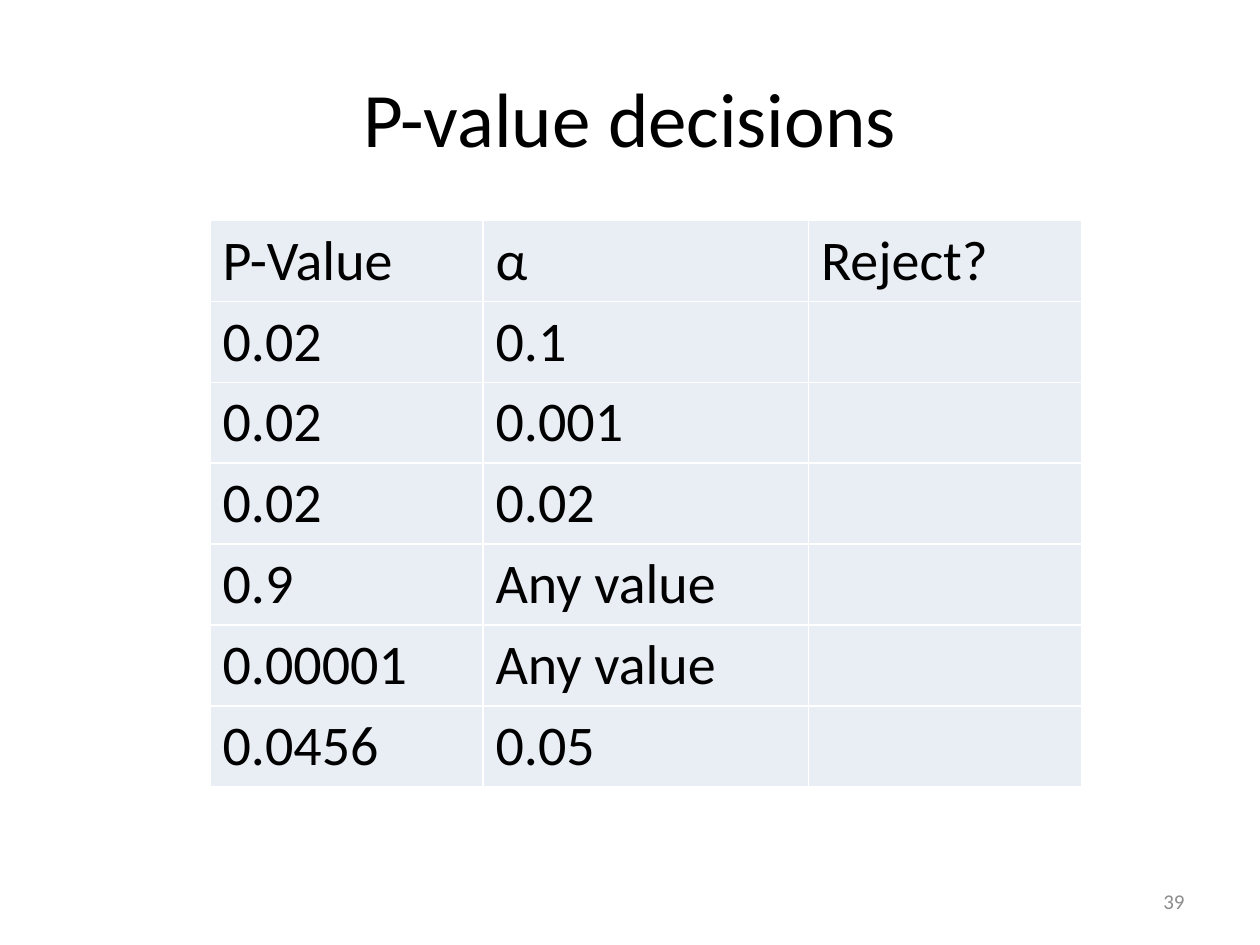
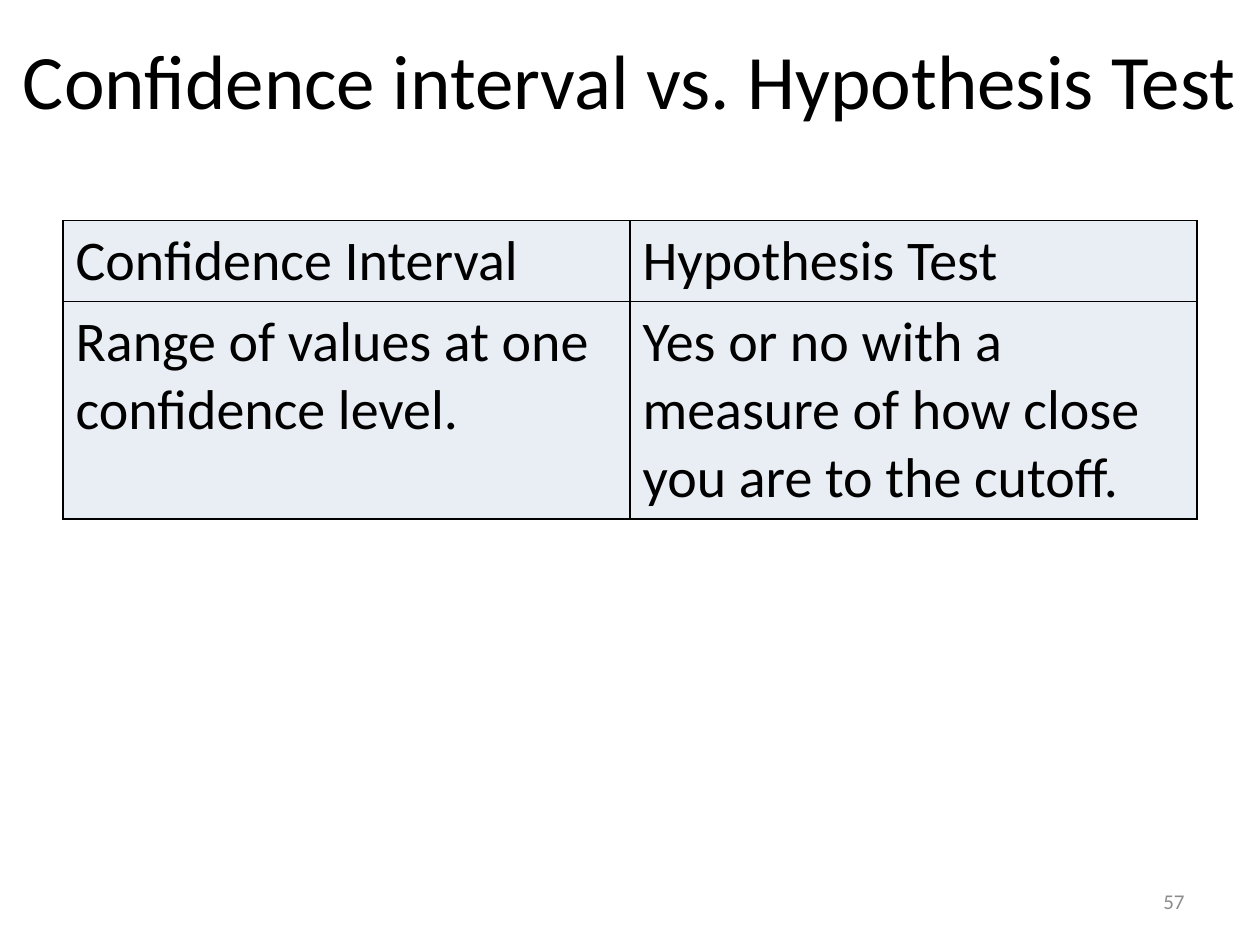
from pptx import Presentation
from pptx.dml.color import RGBColor
from pptx.enum.text import MSO_ANCHOR as Anchor, PP_ALIGN as Align
from pptx.oxml import parse_xml
from pptx.oxml.ns import nsdecls
from pptx.util import Pt

BLACK = RGBColor(0x00, 0x00, 0x00)
WHITE = RGBColor(0xFF, 0xFF, 0xFF)
PALE = RGBColor(0xE9, 0xED, 0xF4)
GRAY = RGBColor(0x8C, 0x8C, 0x8C)

# Shared text styles
FACE = {"name": "Calibri", "bold": False}
TITLE = {**FACE, "size": Pt(44)}
CELL = {**FACE, "size": Pt(32)}
PAGE = {**FACE, "size": Pt(12)}

LINE = 39  # height of one line of cell text
PAD = 7.25  # top and bottom cell margins together
TOP = 126  # top edge of every table

TESTS = [
    ("P-Value", "α", "Reject?"),
    ("0.02", "0.1", ""),
    ("0.02", "0.001", ""),
    ("0.02", "0.02", ""),
    ("0.9", "Any value", ""),
    ("0.00001", "Any value", ""),
    ("0.0456", "0.05", ""),
]
METHODS = [
    ("Confidence Interval", "Hypothesis Test"),
    ("Range of values at one confidence level.",
     "Yes or no with a measure of how close you are to the cutoff."),
]


def style(para, look, color, align):
    para.alignment = align
    for key, value in look.items():
        setattr(para.font, key, value)
    para.font.color.rgb = color


def place(shape, box):
    for side, value in zip(("left", "top", "width", "height"), box):
        setattr(shape, side, Pt(value))


def write(shape, text, look, color, align):
    frame = shape.text_frame
    frame.text = text
    frame.word_wrap = True
    frame.vertical_anchor = Anchor.MIDDLE
    style(frame.paragraphs[0], look, color, align)


def add_slide(deck, title, box, page):
    slide = deck.slides.add_slide(deck.slide_layouts[5])
    place(slide.shapes.title, box)
    write(slide.shapes.title, title, TITLE, BLACK, Align.CENTER)
    # Page number
    note = slide.shapes.add_textbox(Pt(516), Pt(500.5), Pt(168), Pt(28.75))
    write(note, page, PAGE, GRAY, Align.RIGHT)
    return slide


def edge(cell, color):
    props = cell._tc.get_or_add_tcPr()
    for side in "LRTB":
        props.append(parse_xml(
            f'<a:ln{side} {nsdecls("a")} w="{Pt(1)}"><a:solidFill>'
            f'<a:srgbClr val="{color}"/></a:solidFill></a:ln{side}>'))


def add_grid(slide, data, left, widths, lines, color):
    tall = [n * LINE + PAD for n in lines]
    frame = slide.shapes.add_table(
        len(data), len(widths), Pt(left), Pt(TOP), Pt(sum(widths)), Pt(sum(tall)))
    table = frame.table
    table.first_row = table.horz_banding = False
    for col, width in zip(table.columns, widths):
        col.width = Pt(width)
    for row, height, texts in zip(table.rows, tall, data):
        row.height = Pt(height)
        for cell, text in zip(row.cells, texts):
            edge(cell, color)
            cell.fill.solid()
            cell.fill.fore_color.rgb = PALE
            cell.text = text
            style(cell.text_frame.paragraphs[0], CELL, BLACK, Align.LEFT)


def main():
    deck = Presentation()
    deck.slide_width, deck.slide_height = Pt(720), Pt(540)

    # Decisions by p-value
    slide = add_slide(deck, "P-value decisions", (36, 21.6, 648, 90), "39")
    add_grid(slide, TESTS, 120, (156, 186, 156), [1] * len(TESTS), WHITE)

    # Two methods side by side
    slide = add_slide(deck, "Confidence interval vs. Hypothesis Test",
                      (0, 0, 720, 90), "57")
    add_grid(slide, METHODS, 36, (324, 324), (1, 3), BLACK)

    deck.save("out.pptx")


if __name__ == "__main__":
    main()
